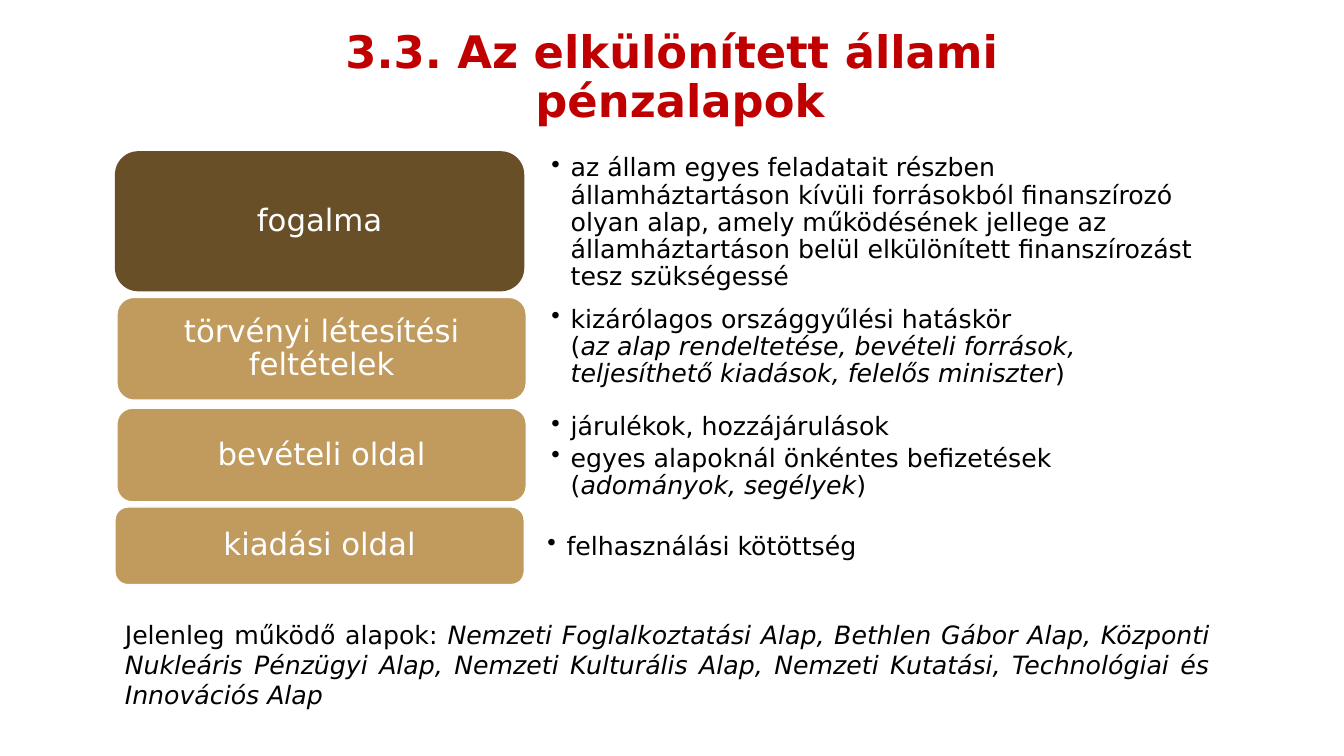
from lxml.etree import SubElement
from pptx import Presentation
from pptx.dml.color import RGBColor
from pptx.enum.shapes import MSO_SHAPE
from pptx.enum.text import MSO_ANCHOR, MSO_AUTO_SIZE, PP_ALIGN
from pptx.oxml.ns import qn
from pptx.util import Inches, Pt

RED = RGBColor(0xC0, 0x00, 0x00)
BROWN = RGBColor(0x68, 0x4F, 0x28)
TAN = RGBColor(0xC1, 0x9A, 0x5E)
WHITE = RGBColor(0xFF, 0xFF, 0xFF)
BLACK = RGBColor(0x00, 0x00, 0x00)
FONT = "DejaVu Sans"


def add_spans(para, spans, size, color, bold=False):
    """Add (text, italic) spans to a paragraph; a newline becomes a line break."""
    for text, italic in spans:
        for index, line in enumerate(text.split("\n")):
            if index:
                para.add_line_break()
            span = para.add_run()
            span.text = line
            span.font.name = FONT
            span.font.size = Pt(size)
            span.font.bold = bold
            span.font.italic = italic
            span.font.color.rgb = color


def make_bullet(para):
    properties = para._p.get_or_add_pPr()
    properties.set("marL", str(Inches(0.19)))
    properties.set("indent", str(-Inches(0.19)))
    SubElement(properties, qn("a:buChar")).set("char", "•")
    para.line_spacing = 0.9


deck = Presentation()
deck.slide_width = Inches(13.33)
deck.slide_height = Inches(7.5)
page = deck.slides.add_slide(deck.slide_layouts[5])

title = page.shapes.title
title.left, title.top = Inches(2.02), Inches(0.13)
title.width, title.height = Inches(9.45), Inches(1.3)
title.text_frame.auto_size = MSO_AUTO_SIZE.NONE
title.text_frame.vertical_anchor = MSO_ANCHOR.MIDDLE
heading = title.text_frame.paragraphs[0]
heading.alignment = PP_ALIGN.CENTER
heading.line_spacing = 0.9
add_spans(heading, [("3.3. Az elkülönített állami \npénzalapok", False)], 32, RED, bold=True)

# label, label left, top, height, fill, list left, list top, list height, bullets
rows = [
    ("fogalma", 1.14, 1.5, 1.39, BROWN, 5.2, 1.68, 1.07, [
        [("az állam egyes feladatait részben államháztartáson kívüli forrásokból "
          "finanszírozó olyan alap, amely működésének jellege az államháztartáson "
          "belül elkülönített finanszírozást tesz szükségessé", False)],
    ]),
    ("törvényi létesítési feltételek", 1.16, 2.95, 1.02, TAN, 5.2, 3.06, 0.77, [
        [("kizárólagos országgyűlési hatáskör \n(", False),
         ("az alap rendeltetése, bevételi források, teljesíthető kiadások, "
          "felelős miniszter", True),
         (")", False)],
    ]),
    ("bevételi oldal", 1.16, 4.05, 0.93, TAN, 5.2, 4.03, 1.01, [
        [("járulékok, hozzájárulások", False)],
        [("egyes alapoknál önkéntes befizetések (", False),
         ("adományok, segélyek", True),
         (")", False)],
    ]),
    ("kiadási oldal", 1.14, 5.03, 0.77, TAN, 5.16, 5.3, 0.25, [
        [("felhasználási kötöttség", False)],
    ]),
]

for label, left, top, height, fill, list_left, list_top, list_height, bullets in rows:
    card = page.shapes.add_shape(MSO_SHAPE.ROUNDED_RECTANGLE, Inches(left), Inches(top),
                                 Inches(4.06), Inches(height))
    card.shadow.inherit = False
    card.fill.solid()
    card.fill.fore_color.rgb = fill
    card.line.color.rgb = WHITE
    card.line.width = Pt(1)
    if fill == BROWN:
        card.line.fill.background()
    card.text_frame.word_wrap = True
    card.text_frame.vertical_anchor = MSO_ANCHOR.MIDDLE
    para = card.text_frame.paragraphs[0]
    para.alignment = PP_ALIGN.CENTER
    para.line_spacing = 0.9
    add_spans(para, [(label, False)], 22, WHITE)

    box = page.shapes.add_textbox(Inches(list_left), Inches(list_top),
                                  Inches(7.16), Inches(list_height))
    frame = box.text_frame
    frame.word_wrap = True
    frame.vertical_anchor = MSO_ANCHOR.MIDDLE
    frame.margin_left = frame.margin_right = Inches(0.27)
    frame.margin_top = frame.margin_bottom = 0
    for index, spans in enumerate(bullets):
        para = frame.add_paragraph() if index else frame.paragraphs[0]
        make_bullet(para)
        para.space_after = Pt(3)
        add_spans(para, spans, 18, BLACK)

funds = page.shapes.add_textbox(Inches(1.14), Inches(6.09), Inches(10.96), Inches(1.31))
funds.text_frame.word_wrap = True
para = funds.text_frame.paragraphs[0]
para.alignment = PP_ALIGN.JUSTIFY
add_spans(para, [
    ("Jelenleg működő alapok: ", False),
    ("Nemzeti Foglalkoztatási Alap, Bethlen Gábor Alap, Központi Nukleáris Pénzügyi "
     "Alap, Nemzeti Kulturális Alap, Nemzeti Kutatási, Technológiai és Innovációs Alap", True),
], 18, BLACK)

deck.save("out.pptx")
